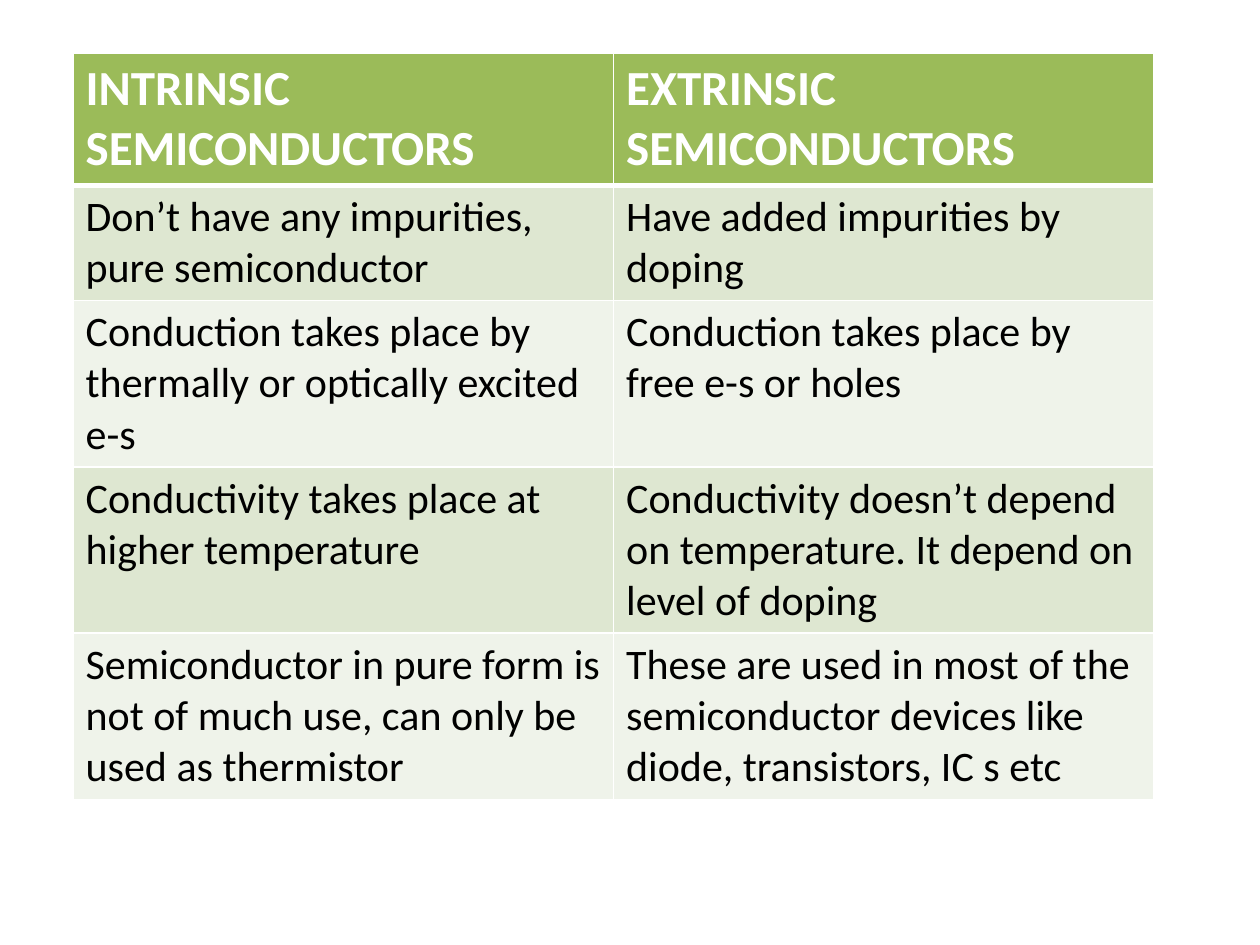
from lxml.etree import SubElement
from pptx import Presentation
from pptx.dml.color import RGBColor
from pptx.oxml.ns import qn
from pptx.util import Inches, Pt

WHITE = RGBColor(0xFF, 0xFF, 0xFF)
BLACK = RGBColor(0x00, 0x00, 0x00)
GREEN = RGBColor(0x9B, 0xBB, 0x59)
SAGE = RGBColor(0xDE, 0xE7, 0xD1)
PALE = RGBColor(0xEF, 0xF3, 0xEA)

SLIDE_WIDTH, SLIDE_HEIGHT = Inches(10), Inches(7.5)
COLUMN_WIDTH, ROW_HEIGHT = Inches(4.29), Inches(0.83)
HEADING_FONT = {"name": "Calibri", "size": Pt(28), "bold": True}
BODY_FONT = {"name": "Calibri", "size": Pt(24), "bold": False}

COMPARISON = [
    ("INTRINSIC SEMICONDUCTORS", "EXTRINSIC SEMICONDUCTORS"),
    ("Don’t have any impurities, pure semiconductor",
     "Have added impurities by doping"),
    ("Conduction takes place by thermally or optically excited e-s",
     "Conduction takes place by free e-s or holes"),
    ("Conductivity takes place at higher temperature",
     "Conductivity doesn’t depend on temperature. It depend on level of doping"),
    ("Semiconductor in pure form is not of much use, can only be used as thermistor",
     "These are used in most of the semiconductor devices like diode, transistors, IC s etc"),
]


def add_borders(cell, widths):
    """Draw white borders of the given point widths, keyed by side."""
    properties = cell._tc.get_or_add_tcPr()
    for side, width in widths.items():
        border = SubElement(properties, qn(f"a:ln{side}"), w=str(Pt(width)))
        fill = SubElement(border, qn("a:solidFill"))
        SubElement(fill, qn("a:srgbClr"), val=str(WHITE))


def write_cell(cell, wording, background, text_color, font_format):
    """Fill a cell and set its formatted wording."""
    cell.fill.solid()
    cell.fill.fore_color.rgb = background
    run = cell.text_frame.paragraphs[0].add_run()
    run.text = wording
    for attribute, value in font_format.items():
        setattr(run.font, attribute, value)
    run.font.color.rgb = text_color


def add_comparison(slide, rows):
    """Add a table with a heading row and banded body rows."""
    column_count = len(rows[0])
    table = slide.shapes.add_table(
        len(rows), column_count,
        int(SLIDE_WIDTH * 0.058), int(SLIDE_HEIGHT * 0.056),
        COLUMN_WIDTH * column_count, ROW_HEIGHT * len(rows),
    ).table
    for row_index, row in enumerate(rows):
        heading = row_index == 0
        background = GREEN if heading else (PALE, SAGE)[row_index % 2]
        text_color = WHITE if heading else BLACK
        font_format = HEADING_FONT if heading else BODY_FONT
        widths = {"L": 1, "R": 1,
                  "T": 3 if row_index == 1 else 1,
                  "B": 3 if heading else 1}
        for column_index, wording in enumerate(row):
            cell = table.cell(row_index, column_index)
            add_borders(cell, widths)
            write_cell(cell, wording, background, text_color, font_format)


def main():
    """Build and save the semiconductor comparison slide."""
    presentation = Presentation()
    presentation.slide_width = SLIDE_WIDTH
    presentation.slide_height = SLIDE_HEIGHT
    slide = presentation.slides.add_slide(presentation.slide_layouts[6])
    add_comparison(slide, COMPARISON)
    presentation.save("out.pptx")


if __name__ == "__main__":
    main()
